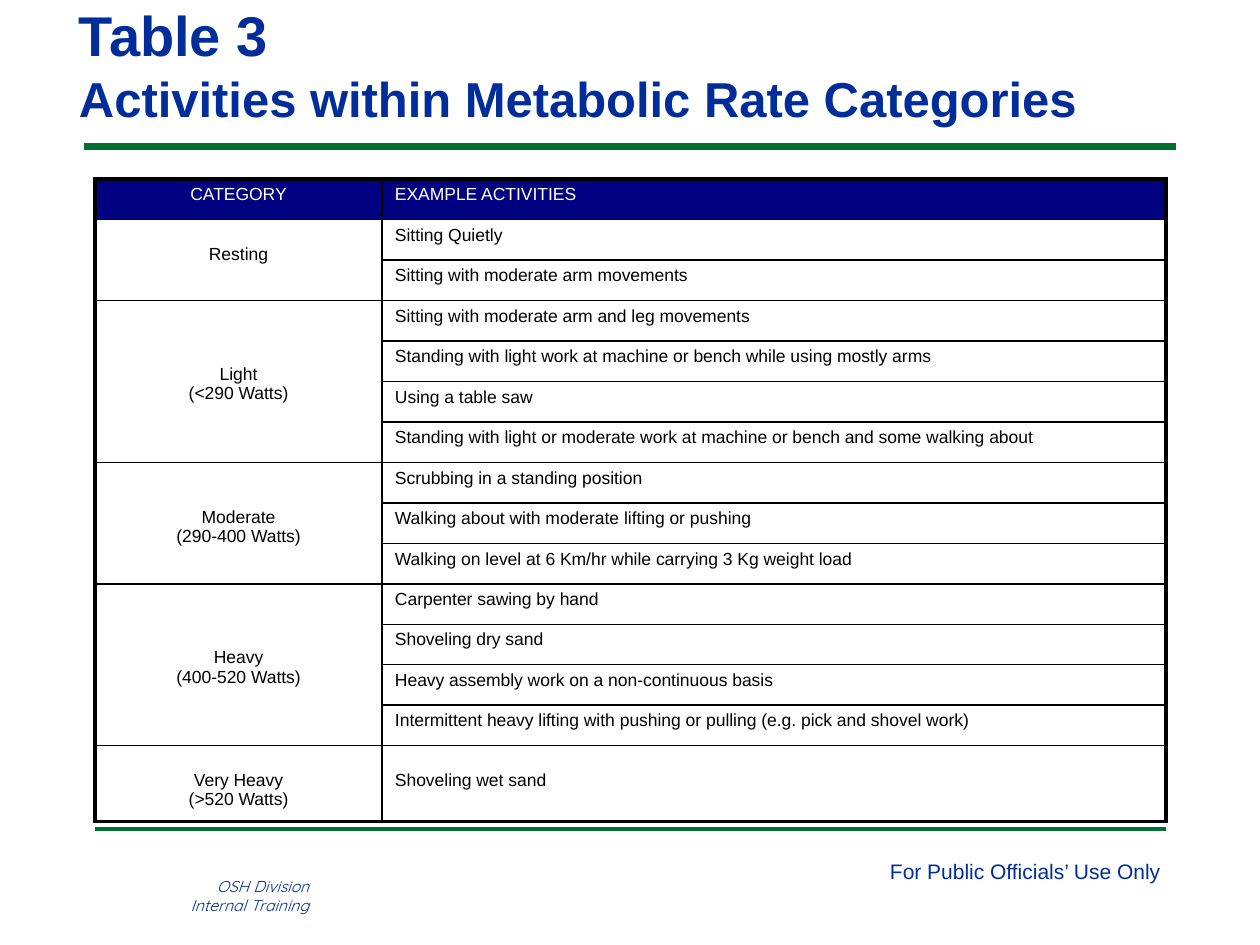
"""Build the slide listing activities within metabolic rate categories."""
import dataclasses

import lxml.etree
import pptx
import pptx.dml.color
import pptx.enum.shapes
import pptx.enum.text
import pptx.oxml.ns
import pptx.util

EMU_PER_PX = 914400 / 126
ALIGN = pptx.enum.text.PP_ALIGN
ANCHOR = pptx.enum.text.MSO_ANCHOR


@dataclasses.dataclass(frozen=True)
class Theme:
    """Colours, fonts and type sizes of the slide."""
    blue: str = "012D9A"
    green: str = "007030"
    navy: str = "000080"
    black: str = "000000"
    white: str = "FFFFFF"
    font: str = "Arial"
    label_font: str = "Quicksand"
    title_size: int = 32
    subtitle_size: int = 28
    notice_size: int = 12
    label_size: int = 9
    table_size: int = 10
    outer_border: float = 2.25
    inner_border: float = 1


THEME = Theme()
HEADER = ("CATEGORY", "EXAMPLE ACTIVITIES")
CATEGORIES = [
    ("Resting", 25, ["Sitting Quietly", "Sitting with moderate arm movements"]),
    ("Light\n(<290 Watts)", 64, [
        "Sitting with moderate arm and leg movements",
        "Standing with light work at machine or bench while using mostly arms",
        "Using a table saw",
        "Standing with light or moderate work at machine or bench and some walking about",
    ]),
    ("Moderate\n(290-400 Watts)", 45, [
        "Scrubbing in a standing position",
        "Walking about with moderate lifting or pushing",
        "Walking on level at 6 Km/hr while carrying 3 Kg weight load",
    ]),
    ("Heavy\n(400-520 Watts)", 64, [
        "Carpenter sawing by hand",
        "Shoveling dry sand",
        "Heavy assembly work on a non-continuous basis",
        "Intermittent heavy lifting with pushing or pulling (e.g. pick and shovel work)",
    ]),
    ("Very Heavy\n(>520 Watts)", 25, ["Shoveling wet sand"]),
]


def px(length):
    """Turn a length in px into EMU."""
    return pptx.util.Emu(round(length * EMU_PER_PX))


def rgb(colour):
    """Return a colour object for a hex string."""
    return pptx.dml.color.RGBColor.from_string(colour)


def write(frame, text, *, size, colour, font=THEME.font, bold=False, italic=False,
          align=ALIGN.LEFT):
    """Add each line of text to a frame as a formatted paragraph."""
    for line in text.split("\n"):
        paragraph = frame.add_paragraph() if frame.text else frame.paragraphs[0]
        paragraph.alignment = align
        run = paragraph.add_run()
        run.text = line
        run.font.name = font
        run.font.size = pptx.util.Pt(size)
        run.font.bold = bold
        run.font.italic = italic
        run.font.color.rgb = rgb(colour)


def add_text_box(slide, left, top, width, height, *, wrap=True, margins=(13, 6),
                 anchor=ANCHOR.TOP):
    """Add an empty text box and return its text frame."""
    frame = slide.shapes.add_textbox(px(left), px(top), px(width), px(height)).text_frame
    frame.word_wrap = wrap
    frame.vertical_anchor = anchor
    frame.margin_left = frame.margin_right = px(margins[0])
    frame.margin_top = frame.margin_bottom = px(margins[1])
    return frame


def add_rule(slide, left, right, y, weight):
    """Add a horizontal green rule."""
    rule = slide.shapes.add_connector(
        pptx.enum.shapes.MSO_CONNECTOR.STRAIGHT, px(left), px(y), px(right), px(y))
    rule.line.color.rgb = rgb(THEME.green)
    rule.line.width = pptx.util.Pt(weight)
    properties = rule._element.spPr
    lxml.etree.SubElement(properties, pptx.oxml.ns.qn("a:effectLst"))


def set_borders(cell, outer_sides):
    """Draw all four borders of a cell, heavier on the outer sides."""
    properties = cell._tc.get_or_add_tcPr()
    for side in "LRTB":
        weight = THEME.outer_border if side in outer_sides else THEME.inner_border
        line = lxml.etree.SubElement(
            properties, pptx.oxml.ns.qn(f"a:ln{side}"), w=str(pptx.util.Pt(weight)))
        fill = lxml.etree.SubElement(line, pptx.oxml.ns.qn("a:solidFill"))
        lxml.etree.SubElement(fill, pptx.oxml.ns.qn("a:srgbClr"), val=THEME.black)


def fill_cell(cell, text, *, align=ALIGN.LEFT, colour=THEME.black, top=6):
    """Write text into a table cell below a top margin."""
    cell.margin_left = cell.margin_right = px(13)
    cell.margin_top, cell.margin_bottom = px(top), px(6)
    write(cell.text_frame, text, size=THEME.table_size, colour=colour, align=align)


def add_activity_table(slide):
    """Add the table of categories and example activities."""
    row_count = 1 + sum(len(activities) for _, _, activities in CATEGORIES)
    table = slide.shapes.add_table(
        row_count, 2, px(95), px(179), px(1071), px(643)).table
    table.first_row = table.horz_banding = False
    table.columns[0].width, table.columns[1].width = px(287), px(784)
    last = row_count - 1
    for index, row in enumerate(table.rows):
        row.height = px(76) if index == last else px(567 / last)
        for column, cell in enumerate(row.cells):
            edges = "LR"[column] + ("T" if index == 0 else "") + ("B" if index == last else "")
            set_borders(cell, edges)
            if index == 0:
                cell.fill.solid()
                cell.fill.fore_color.rgb = rgb(THEME.navy)
            else:
                cell.fill.background()
    for column, (text, align) in enumerate(zip(HEADER, (ALIGN.CENTER, ALIGN.LEFT))):
        fill_cell(table.cell(0, column), text, align=align, colour=THEME.white)
    start = 1
    for category, top, activities in CATEGORIES:
        end = start + len(activities) - 1
        if end > start:
            table.cell(start, 0).merge(table.cell(end, 0))
        fill_cell(table.cell(start, 0), category, align=ALIGN.CENTER, top=top)
        for index, activity in enumerate(activities, start):
            fill_cell(table.cell(index, 1), activity, top=top if index == last else 6)
        start = end + 1


def main():
    """Build and save the slide."""
    presentation = pptx.Presentation()
    presentation.slide_width, presentation.slide_height = px(1260), px(945)
    slide = presentation.slides.add_slide(presentation.slide_layouts[6])
    add_rule(slide, 84, 1176, 147, 4)
    add_rule(slide, 95, 1166, 829, 2)
    notice = add_text_box(slide, 877, 853, 299, 38, wrap=False)
    write(notice, "For Public Officials’ Use Only", size=THEME.notice_size, colour=THEME.blue)
    label = add_text_box(slide, 147, 871, 175, 62)
    write(label, "OSH Division\nInternal Training", size=THEME.label_size, colour=THEME.blue,
          font=THEME.label_font, italic=True, align=ALIGN.RIGHT)
    title = add_text_box(slide, 73, 0, 1134, 127, margins=(6, 0), anchor=ANCHOR.BOTTOM)
    write(title, "Table 3", size=THEME.title_size, colour=THEME.blue, bold=True)
    write(title, "Activities within Metabolic Rate Categories", size=THEME.subtitle_size,
          colour=THEME.blue, bold=True)
    add_activity_table(slide)
    presentation.save("out.pptx")


if __name__ == "__main__":
    main()
